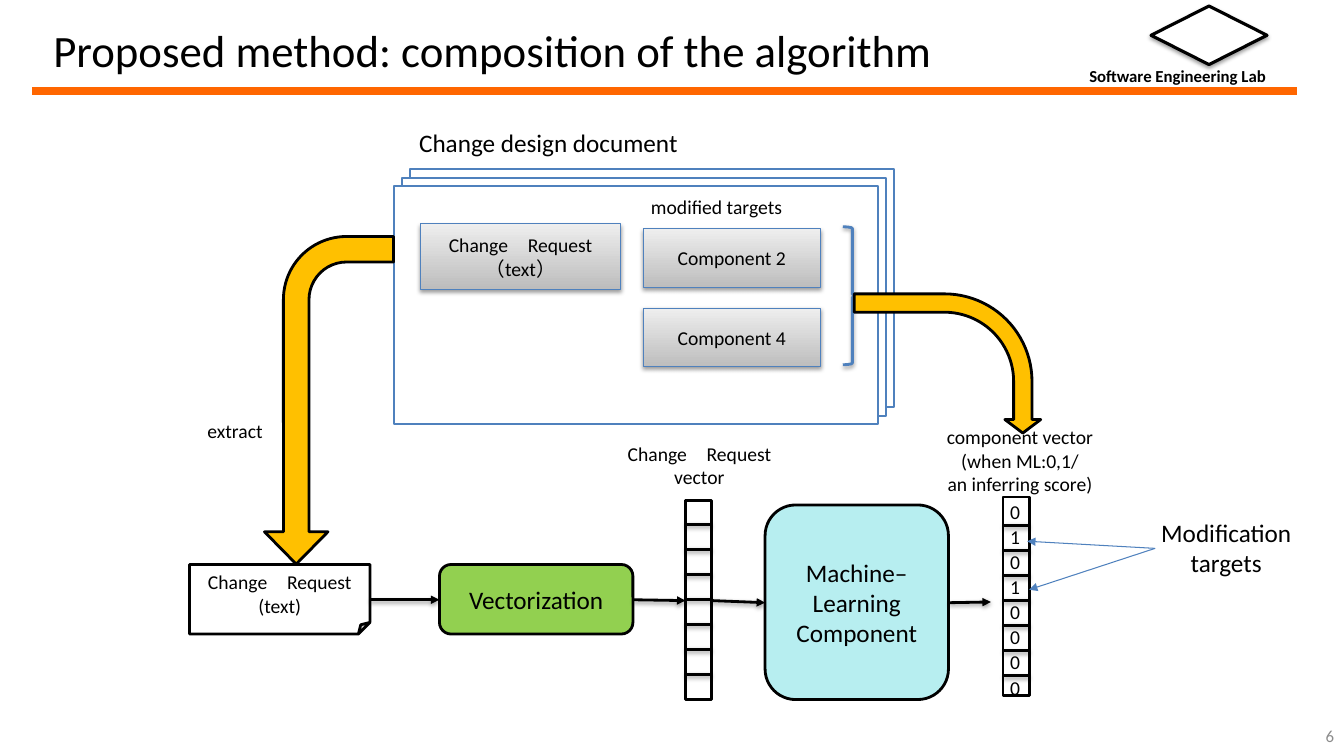
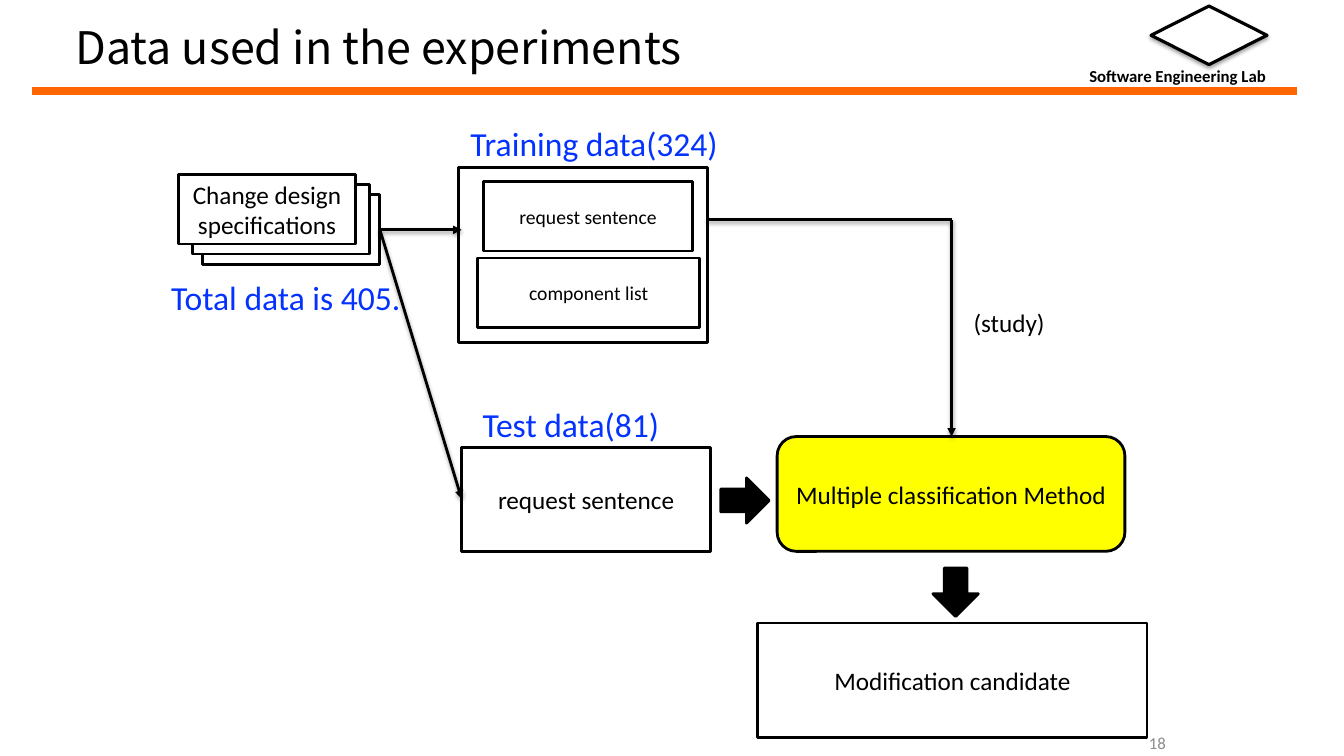
"""Build two slides on the composition of the method and the data of its experiments."""
from dataclasses import dataclass

from lxml import etree
from pptx import Presentation
from pptx import util as u
from pptx.dml import color
from pptx.enum import shapes, text
from pptx.oxml import ns

Kind = shapes.MSO_SHAPE
Align = text.PP_ALIGN
Anchor = text.MSO_ANCHOR


@dataclass(frozen=True)
class Theme:
    """Colours, fonts and type sizes."""
    ink: str = "000000"
    paper: str = "FFFFFF"
    band: str = "FF6600"
    grey: str = "8C8C8C"
    blue: str = "4F81BD"
    data: str = "0432FF"
    amber: str = "FFC000"
    green: str = "92D050"
    aqua: str = "B7EEF0"
    yellow: str = "FFFF00"
    metal: tuple = ("BDBDBD", "EEEEEE")
    font: str = "Calibri"
    title_font: str = "Noto Sans CJK JP"
    small: int = 12
    label: int = 14
    body: int = 18
    data_size: int = 24
    title: int = 32
    line: float = 2


class Deck:
    """Hold the style and the current page."""

    def __init__(self, theme):
        """Start an empty widescreen deck."""
        self.theme = theme
        self.deck = Presentation()
        self.deck.slide_width, self.deck.slide_height = u.Pt(960), u.Pt(540)
        self.page = None

    def start(self, title, left, top, number, number_left, number_top, font=None):
        """Add a page with the shared header and its number."""
        t = self.theme
        self.page = self.deck.slides.add_slide(self.deck.slide_layouts[6])
        self.line((23, 64.8), (926.6, 64.8), ink=t.band, width=6, shadow=False)
        self.label("Software Engineering Lab", (771, 43.2, 155, 22), t.small, bold=True)
        self.shape(Kind.FLOWCHART_DECISION, (822.2, 4.3, 82.8, 41.8), width=2.25, shadow=True)
        self.label(title, (left, top, 700, 62), t.title, font=font, anchor=Anchor.MIDDLE)
        self.label(number, (number_left, number_top, 168, 29), t.small, t.grey,
                   Align.RIGHT, anchor=Anchor.MIDDLE)

    def set_words(self, frame, words, size, ink, align, bold, font, anchor):
        """Fill a text frame, one paragraph a line."""
        for name, value in {"word_wrap": True, "vertical_anchor": anchor}.items():
            setattr(frame, name, value)
        style = {"name": font or self.theme.font, "size": u.Pt(size), "bold": bold}
        for i, line in enumerate(words.split("\n")):
            para = frame.add_paragraph() if i else frame.paragraphs[0]
            para.alignment = align
            span = para.add_run()
            span.text = line
            for name, value in style.items():
                setattr(span.font, name, value)
            span.font.color.rgb = color.RGBColor.from_string(ink)

    def label(self, words, at, size=None, ink=None, align=Align.LEFT, bold=False,
              font=None, anchor=Anchor.TOP):
        """Add free text."""
        box = self.page.shapes.add_textbox(*map(u.Pt, at))
        self.set_words(box.text_frame, words, size or self.theme.label,
                       ink or self.theme.ink, align, bold, font, anchor)

    def stroke(self, item, ink, width):
        """Set the outline of a shape or connector."""
        item.line.color.rgb = color.RGBColor.from_string(ink)
        item.line.width = u.Pt(width)

    def cast(self, item):
        """Drop a soft shadow straight down."""
        effects = item.element.spPr.find(ns.qn("a:effectLst"))
        drop = etree.SubElement(effects, ns.qn("a:outerShdw"), blurRad=str(u.Pt(3.1)),
                                dist=str(u.Pt(1.6)), dir="5400000", rotWithShape="0")
        tint = etree.SubElement(drop, ns.qn("a:srgbClr"), val=self.theme.ink)
        etree.SubElement(tint, ns.qn("a:alpha"), val="38000")

    def shape(self, kind, at, words="", fill=Theme.paper, ink=None, width=None, size=None,
              shadow=False, turn=0, flip=False, adjust=()):
        """Add a preset shape; a pair of fills makes a gradient, None leaves it open."""
        t = self.theme
        box = self.page.shapes.add_shape(kind, *map(u.Pt, at))
        box.shadow.inherit = False
        if fill is None:
            box.fill.background()
        elif isinstance(fill, tuple):
            box.fill.gradient()
            box.fill.gradient_angle = 90
            for stop, tone in zip(box.fill.gradient_stops, fill):
                stop.color.rgb = color.RGBColor.from_string(tone)
        else:
            box.fill.solid()
            box.fill.fore_color.rgb = color.RGBColor.from_string(fill)
        self.stroke(box, ink or t.ink, width or t.line)
        box.rotation = turn
        for i, value in enumerate(adjust):
            box.adjustments[i] = value
        if flip:
            box.element.spPr.xfrm.set("flipV", "1")
        if shadow:
            self.cast(box)
        if words:
            self.set_words(box.text_frame, words, size or t.body, t.ink, Align.CENTER,
                           False, None, Anchor.MIDDLE)

    def line(self, start, end, arrow=False, ink=None, width=None, shadow=True):
        """Add a straight line, with an arrowhead if asked."""
        t = self.theme
        link = self.page.shapes.add_connector(
            shapes.MSO_CONNECTOR.STRAIGHT, *map(u.Pt, (*start, *end)))
        self.stroke(link, ink or t.ink, width or t.line)
        props = link.element.spPr
        if arrow:
            etree.SubElement(props.find(ns.qn("a:ln")), ns.qn("a:tailEnd"), type="triangle")
        etree.SubElement(props, ns.qn("a:effectLst"))
        if shadow:
            self.cast(link)

    def vector(self, left, top, first, digits=""):
        """Add a column of eight cells, with digits if given."""
        width, step = 18.9, 17.9
        self.shape(Kind.RECTANGLE, (left, top, width, 142))
        for i in range(7):
            y = top + first + i * step
            self.line((left, y), (left + width, y))
        for i, digit in enumerate(digits):
            self.label(digit, (left - 2, top - 1.4 + i * step, 31, 27))


def algorithm(deck):
    """Draw the composition of the algorithm."""
    t = deck.theme
    deck.start("Proposed method: composition of the algorithm", 31, 4.3, "6", 792, 511)
    deck.label("Change design document", (292.3, 87.1, 247, 31), t.body)
    for i in range(3):
        deck.shape(Kind.RECTANGLE, (293 - 5.8 * i, 121 + 6 * i, 345.6, 170),
                   ink=t.blue, width=1.5)
    for words, at in (("Change　Request\n（text）", (300.2, 159.8, 143.3, 46.8)),
                      ("Component 2", (459.4, 163.4, 126.7, 41.8)),
                      ("Component 4", (459.4, 220.3, 126.7, 41.8))):
        deck.shape(Kind.RECTANGLE, at, words, t.metal, t.blue, 0.75, t.label, shadow=True)
    deck.label("modified targets", (457.9, 135.4, 129, 26))
    deck.label("extract", (141.1, 295.9, 64, 26))
    deck.shape(Kind.FOLDED_CORNER, (135.4, 403.2, 128.9, 49.7), "Change　Request\n(text)",
               size=t.label)
    deck.shape(Kind.ROUNDED_RECTANGLE, (313.9, 403.2, 138.2, 49.7), "Vectorization", t.green)
    deck.vector(489.6, 357.8, 16.6)
    deck.vector(716.4, 355, 20.2, "01010000")
    deck.shape(Kind.ROUNDED_RECTANGLE, (546.5, 360.7, 131, 139),
               "Machine–\nLearning\nComponent", t.aqua)
    deck.label("Change　Request\nvector", (433.4, 311.8, 132.5, 44), align=Align.CENTER)
    deck.label("component vector\n(when ML:0,1/\nan inferring score)",
               (615.6, 300.2, 226, 62), align=Align.CENTER)
    for start, end in (((264.2, 428.4), (313.9, 428.4)), ((678.2, 430.5), (707.8, 430)),
                       ((508.5, 429), (546.5, 430.5)), ((452.2, 428.4), (489.6, 429))):
        deck.line(start, end, arrow=True)
    deck.shape(Kind.BENT_ARROW, (118, 239.8, 234, 92.2), fill=t.amber, turn=90, flip=True,
               adjust=(0.198, 0.246, 0.25, 0.489))
    deck.shape(Kind.RIGHT_BRACE, (602, 162, 13.7, 98.6), fill=None, ink=t.blue, shadow=True)
    deck.shape(Kind.BENT_ARROW, (627.1, 193, 99.4, 133.2), fill=t.amber, turn=90,
               adjust=(0.132, 0.129, 0.097, 0.629))
    deck.label("Modification targets", (817.9, 365.8, 116, 51), t.body, align=Align.CENTER)
    for end in ((733.7, 386.6), (735.1, 421.2)):
        deck.line((825.1, 391.7), end, True, t.blue, 0.75, shadow=False)


def experiment(deck):
    """Draw the data used in the experiments."""
    t = deck.theme
    deck.start("Data used in the experiments", 46.8, 2.2, "18", 671.8, 516.2, t.title_font)
    for left, top, words in ((144.7, 139, ""), (137.5, 131.8, ""),
                             (127.4, 124.6, "Change design specifications")):
        deck.shape(Kind.RECTANGLE, (left, top, 126.7, 49.7), words)
    deck.shape(Kind.RECTANGLE, (327.6, 119.5, 177.8, 125.3))
    for words, at, size in (("request sentence", (345.6, 129.6, 149, 49.7), t.label),
                            ("component list", (341.3, 184.3, 158.4, 49.7), t.label),
                            ("Modification candidate", (541.4, 445, 277.9, 82), t.body),
                            ("request sentence", (329.8, 319.7, 177.8, 74.2), t.body)):
        deck.shape(Kind.RECTANGLE, at, words, size=size)
    deck.shape(Kind.ROUNDED_RECTANGLE, (555.1, 311.8, 248.4, 82),
               "Multiple classification Method", t.yellow)
    for left, top, turn in ((514.8, 341.3, 0), (665.3, 406.8, 90)):
        deck.shape(Kind.RIGHT_ARROW, (left, top, 34.6, 32.4), fill=t.ink, turn=turn)
    for start, end, arrow in (((271.4, 164.2), (329.8, 164.2), True),
                              ((271.4, 164.2), (329.8, 356.4), True),
                              ((505.4, 157), (679.7, 157), False),
                              ((679.7, 157), (679.7, 311.8), True)):
        deck.line(start, end, arrow)
    for words, left, top in (("Training data(324)", 329, 84.2), ("Test data(81)", 337.7, 285.1),
                             ("Total data is 405.", 115.2, 194.4)):
        deck.label(words, (left, top, 200, 36), t.data_size, t.data)
    deck.label("(study)", (688.3, 216, 72, 29), t.body)


def main():
    """Build and save the deck."""
    deck = Deck(Theme())
    algorithm(deck)
    experiment(deck)
    deck.deck.save("out.pptx")


if __name__ == "__main__":
    main()
